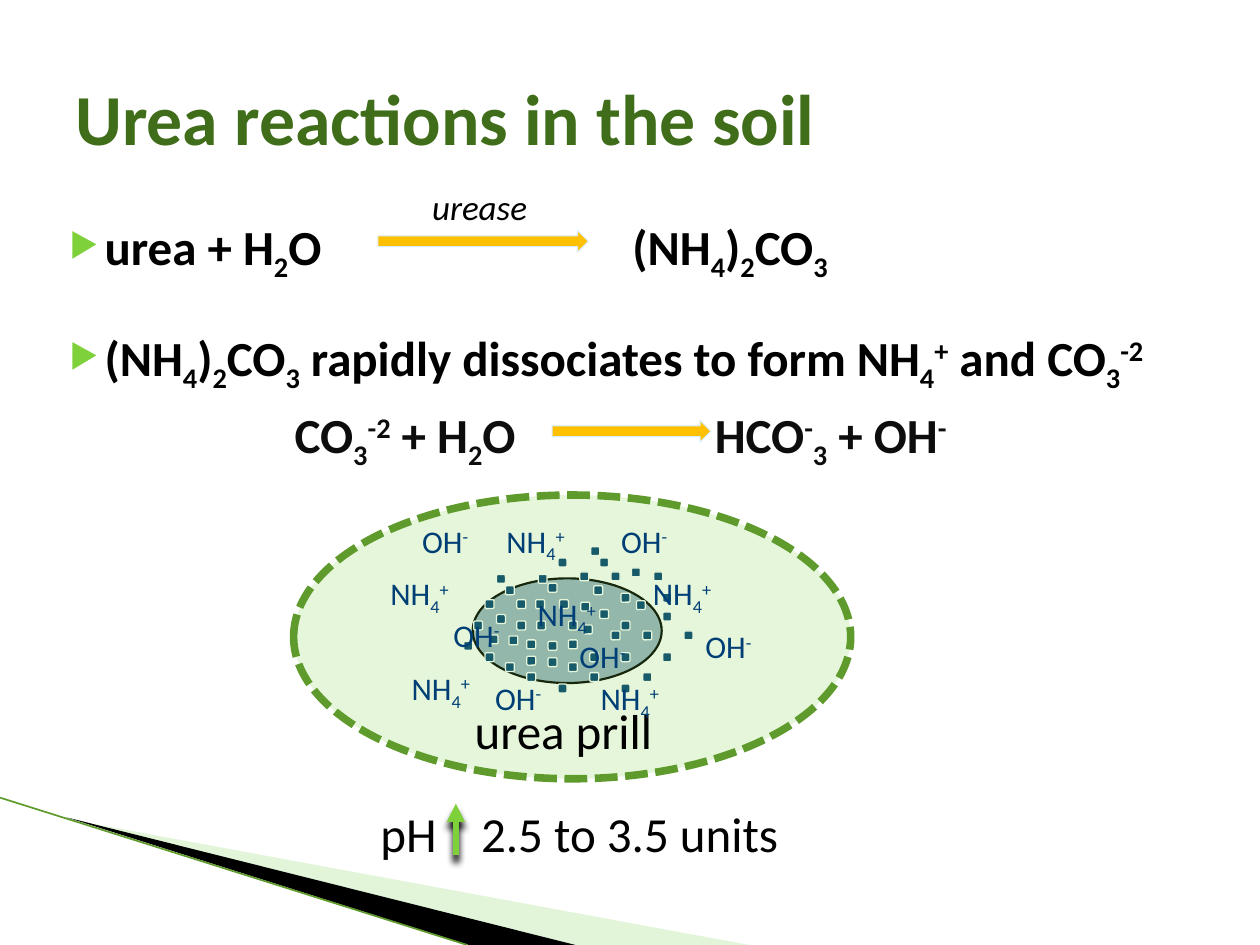
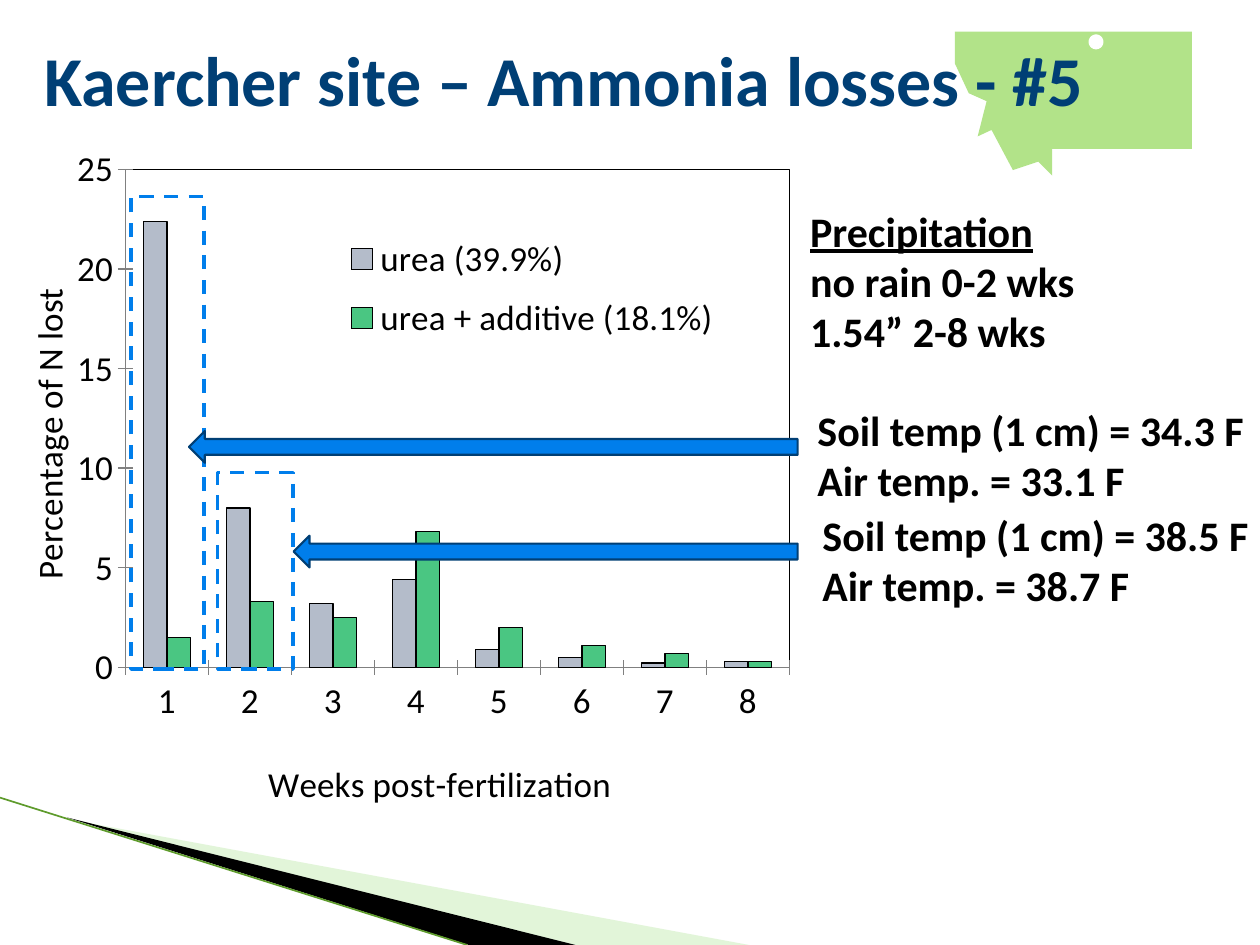
from lxml import etree
from pptx import Presentation
from pptx.chart.data import CategoryChartData
from pptx.dml.color import RGBColor
from pptx.enum.chart import XL_CHART_TYPE, XL_LEGEND_POSITION, XL_TICK_MARK
from pptx.enum.dml import MSO_LINE
from pptx.enum.shapes import MSO_CONNECTOR, MSO_SHAPE
from pptx.enum.text import MSO_ANCHOR
from pptx.oxml.ns import qn
from pptx.util import Cm, Pt

FONT = "Calibri"
BLACK, WHITE = "000000", "FFFFFF"
NAVY, BLUE, SKY = "003F75", "007EEB", "D6ECFF"
GREEN, LEAF, FOREST, PALE = "7FD13B", "5E9B2C", "3F6D19", "B8E7A1"
AMBER = "FFC000"

DOT_SIZE = 0.18
DOT_ROWS = {
    1.04: [5.99], 1.27: [5.33, 6.17], 1.47: [6.81], 1.55: [5.77, 6.4, 7.26],
    1.6: [4.09, 4.93], 1.78: [5.13], 1.83: [4.27, 6.05], 1.98: [6.6, 7.44],
    2.11: [3.86, 4.5, 4.88, 5.36], 2.13: [6.91], 2.16: [5.79], 2.31: [6.17],
    2.36: [7.44], 2.41: [4.09], 2.54: [3.63, 4.5, 4.9, 5.54, 6.6], 2.62: [5.84],
    2.74: [6.4, 7.04, 7.87], 2.82: [3.94], 2.84: [4.34], 2.92: [4.7, 5.54],
    2.95: [3.43, 5.13], 3.18: [3.86, 5.97, 6.6, 7.44], 3.25: [4.7], 3.28: [5.13],
    3.38: [4.27, 5.54], 3.58: [4.7, 5.97, 7.04], 3.81: [5.33, 6.6],
}
IONS = {
    "NH|_4|^+": [(2.13, 3.38), (1.7, 1.47), (5.94, 3.58),
                 (4.04, 0.41), (6.99, 1.47), (4.67, 1.9)],
    "OH|^-": [(5.51, 2.74), (3.81, 3.58), (2.34, 0.41),
              (8.05, 2.54), (2.97, 2.31), (6.35, 0.41)],
}
STATE_OUTLINE = [
    (0, 0), (0, 0.64), (0.28, 1.24), (0.64, 1.4), (0.46, 2.11), (0.74, 1.98),
    (1.17, 2.79), (1.68, 2.62), (1.96, 2.9), (1.96, 2.36), (4.78, 2.36), (4.78, 0),
]
LOSSES = [
    ("urea (39.9%)", [22.4, 8, 3.2, 4.4, 0.9, 0.5, 0.2, 0.3], "B4BCCA", 100),
    ("urea + additive (18.1%)", [1.5, 3.3, 2.5, 6.8, 2, 1.1, 0.7, 0.3], "00B050", 71),
]


def rgb(value):
    return RGBColor.from_string(value)


def add_element(parent, tag, **attributes):
    element = etree.SubElement(parent, qn(tag))
    for name, value in attributes.items():
        element.set(name, str(value))
    return element


def set_fill(fill, color, opacity=100):
    if color is None:
        fill.background()
        return
    fill.solid()
    fill.fore_color.rgb = rgb(color)
    if opacity < 100:
        add_element(fill._xPr.find(".//" + qn("a:srgbClr")), "a:alpha", val=opacity * 1000)


def set_line(line, color, width=0.75, dash=None):
    if color is None:
        line.fill.background()
        return
    line.color.rgb = rgb(color)
    line.width = Pt(width)
    if dash:
        line.dash_style = dash


def add_shape(slide, kind, left, top, width, height, fill=None, opacity=100,
              line=None, line_width=0.75, dash=None):
    shape = slide.shapes.add_shape(kind, Cm(left), Cm(top), Cm(width), Cm(height))
    shape.shadow.inherit = False
    set_fill(shape.fill, fill, opacity)
    set_line(shape.line, line, line_width, dash)
    return shape


def add_polygon(slide, points, fill, opacity=100, left=0, top=0):
    points = [(Cm(left + x), Cm(top + y)) for x, y in points]
    builder = slide.shapes.build_freeform(*points[0])
    builder.add_line_segments(points[1:], close=True)
    shape = builder.convert_to_shape()
    shape.shadow.inherit = False
    set_fill(shape.fill, fill, opacity)
    set_line(shape.line, None)


def add_line(slide, start, end, color, width):
    connector = slide.shapes.add_connector(
        MSO_CONNECTOR.STRAIGHT, *(Cm(value) for value in (*start, *end)))
    set_line(connector.line, color, width)
    effects = add_element(connector._element.spPr, "a:effectLst")
    return connector, effects


def add_bullet(paragraph):
    properties = paragraph._p.get_or_add_pPr()
    properties.set("marL", str(Cm(1.02)))
    properties.set("indent", str(-Cm(0.71)))
    add_element(add_element(properties, "a:buClr"), "a:srgbClr", val=GREEN)
    add_element(properties, "a:buSzPct", val=68000)
    add_element(properties, "a:buChar", char="▶")


def add_tab(paragraph, position):
    tabs = add_element(paragraph._p.get_or_add_pPr(), "a:tabLst")
    add_element(tabs, "a:tab", pos=Cm(position), algn="l")


def add_text(slide, text, left, top, width, height, size=28, color=BLACK, bold=False,
             italic=False, anchor=MSO_ANCHOR.TOP, bullet=False, tab=None, gap=0):
    """Lines become paragraphs; | parts runs, _ lowers a run and ^ raises it."""
    box = slide.shapes.add_textbox(Cm(left), Cm(top), Cm(width), Cm(height))
    frame = box.text_frame
    frame.word_wrap = True
    frame.vertical_anchor = anchor
    frame.margin_right = 0
    for index, line in enumerate(text.split("\n")):
        paragraph = frame.add_paragraph() if index else frame.paragraphs[0]
        if bullet:
            add_bullet(paragraph)
        if tab:
            add_tab(paragraph, tab)
        if index and gap:
            paragraph.space_before = Pt(gap)
        for part in line.split("|"):
            run = paragraph.add_run()
            run.text = part.lstrip("_^")
            font = run.font
            font.name, font.size, font.bold, font.italic = FONT, Pt(size), bold, italic
            font.color.rgb = rgb(color)
            baseline = {"_": -25000, "^": 30000}.get(part[0])
            if baseline:
                run._r.get_or_add_rPr().set("baseline", str(baseline))
    return box


def add_title(slide, text, left, top, size, color):
    add_text(slide, text, left, top, 22.86, 3.18, size=size, color=color,
             bold=True, anchor=MSO_ANCHOR.MIDDLE)


def new_slide(presentation):
    """Add a blank slide with the corner bands."""
    slide = presentation.slides.add_slide(presentation.slide_layouts[6])
    add_polygon(slide, [(1.4, 16.52), (15.1, 19.05), (11.58, 19.05)], PALE, 40)
    add_polygon(slide, [(1.35, 16.48), (11.6, 19.05), (9.45, 19.05)], BLACK)
    add_line(slide, (0, 16.08), (9.42, 19.05), LEAF, 0.95)
    return slide


def add_reaction_arrow(slide, left, top, width):
    add_shape(slide, MSO_SHAPE.RIGHT_ARROW, left, top, width, 0.43,
              fill=AMBER, line=SKY, line_width=0.5)


def add_equations(slide, left, top):
    carbonate = "(NH|_4|)|_2|CO|_3"
    add_text(slide, f"urea + H|_2|O\n{carbonate}| rapidly dissociates to form "
             "NH|_4|^+| and CO|_3|^-2",
             left, top, 23.7, 3.53, bold=True, bullet=True, gap=25)
    add_text(slide, carbonate, left + 11.66, top, 5.5, 1.45, bold=True)
    add_text(slide, "urease", left + 7.62, top - 0.63, 2.6, 1.12, size=20, italic=True)
    add_reaction_arrow(slide, left + 6.78, top + 0.41, 4.24)
    add_text(slide, "CO|_3|^-2| + H|_2|O\tHCO|^-|_3| + OH|^-",
             left + 4.85, top + 3.79, 15.27, 1.5, color="0D0D0D", bold=True, tab=8.47)
    add_reaction_arrow(slide, left + 10.29, top + 4.24, 3.2)


def add_rising_arrow(slide, x, bottom, top):
    connector, effects = add_line(slide, (x, bottom), (x, top), GREEN, 3.5)
    add_element(connector.line._get_or_add_ln(), "a:tailEnd", type="triangle")
    shadow = add_element(effects, "a:outerShdw", blurRad=Pt(4), dist=Pt(4), dir=5400000)
    add_element(shadow, "a:srgbClr", val=BLACK)


def add_prill_diagram(slide, left, top):
    add_shape(slide, MSO_SHAPE.OVAL, left + 3.61, top + 1.68, 3.81, 2.11,
              fill=NAVY, opacity=40, line=BLACK, line_width=1.25)
    for y, row in DOT_ROWS.items():
        for x in row:
            add_shape(slide, MSO_SHAPE.ROUNDED_RECTANGLE, left + x, top + y,
                      DOT_SIZE, DOT_SIZE, fill=NAVY, line=WHITE)
    add_shape(slide, MSO_SHAPE.OVAL, left, top, 11.23, 5.72, fill=GREEN, opacity=19,
              line=LEAF, line_width=4.33, dash=MSO_LINE.SQUARE_DOT)
    add_text(slide, "urea prill", left + 3.4, top + 4.01, 4.11, 1.45)
    for ion, places in IONS.items():
        for x, y in places:
            add_text(slide, ion, left + x, top + y, 1.75, 1.02, size=18, color=NAVY)
    add_text(slide, "pH\t2.5 to 3.5 units", left + 1.5, top + 6.1, 8.86, 1.45, tab=2.03)
    add_rising_arrow(slide, left + 3.27, top + 7.26, top + 6.22)


def set_layout(parent, index, **fractions):
    """Place a chart part by fractions of the chart's size."""
    old = parent.find(qn("c:layout"))
    if old is not None:
        parent.remove(old)
    layout = add_element(parent, "c:layout")
    manual = add_element(layout, "c:manualLayout")
    if parent.tag == qn("c:plotArea"):
        add_element(manual, "c:layoutTarget", val="inner")
    for name in "xy":
        add_element(manual, f"c:{name}Mode", val="edge")
    for name, value in fractions.items():
        add_element(manual, f"c:{name}", val=value)
    parent.insert(index, layout)


def style_axis(axis, title, x, y):
    axis.has_major_gridlines = False
    axis.major_tick_mark = XL_TICK_MARK.CROSS
    axis.tick_labels.font.size = Pt(20)
    set_line(axis.format.line, "808080")
    frame = axis.axis_title.text_frame
    frame.text = title
    font = frame.paragraphs[0].runs[0].font
    font.name, font.size, font.bold = FONT, Pt(20), False
    font.color.rgb = rgb(BLACK)
    set_layout(axis.axis_title._element, 1, x=x, y=y)


def add_loss_chart(slide, left, top, width, height):
    data = CategoryChartData()
    data.categories = [str(week) for week in range(1, 9)]
    for name, values, _, _ in LOSSES:
        data.add_series(name, values)
    chart = slide.shapes.add_chart(XL_CHART_TYPE.COLUMN_CLUSTERED, Cm(left), Cm(top),
                                   Cm(width), Cm(height), data).chart
    chart.has_title = False
    chart.font.name, chart.font.size = FONT, Pt(20)
    chart.font.color.rgb = rgb(BLACK)

    plot = chart.plots[0]
    plot.vary_by_categories = False
    plot.gap_width, plot.overlap = 150, 0
    for series, (_, _, color, opacity) in zip(plot.series, LOSSES):
        set_fill(series.format.fill, color, opacity)
        set_line(series.format.line, BLACK)

    style_axis(chart.category_axis, "Weeks post-fertilization", 0.29, 0.9)
    style_axis(chart.value_axis, "Percentage of N lost", 0.02, 0.2)
    axis = chart.value_axis
    axis.minimum_scale, axis.maximum_scale, axis.major_unit = 0, 25, 5
    axis.tick_labels.number_format = "0"
    axis.tick_labels.number_format_is_linked = False

    chart.has_legend = True
    chart.legend.position = XL_LEGEND_POSITION.RIGHT
    chart.legend.include_in_layout = False
    chart.legend.font.name, chart.legend.font.size = FONT, Pt(20)
    set_layout(chart.legend._element, 1, x=0.36, y=0.11, w=0.46, h=0.2)

    area = chart._chartSpace.chart.plotArea
    set_layout(area, 0, x=0.139, y=0.033, w=0.736, h=0.74)
    frame = add_element(area, "c:spPr")
    add_element(frame, "a:noFill")
    border = add_element(add_element(frame, "a:ln", w=Pt(0.75)), "a:solidFill")
    add_element(border, "a:srgbClr", val=BLACK)


def add_state_map(slide, left, top):
    add_polygon(slide, STATE_OUTLINE, "B2E389", left=left, top=top)
    add_shape(slide, MSO_SHAPE.OVAL, left + 2.77, top + 0.13, 0.15, 0.15,
              fill="FF0000", line=WHITE, line_width=4.33)


def add_week_callout(slide, left, top, width, arrow_left, arrow_top, text_left, text):
    """Frame one week's columns and point to them from its temperatures."""
    base, arrow_end = 13.49, 16.08
    add_shape(slide, MSO_SHAPE.RECTANGLE, left, top, width, base - top,
              line=BLUE, line_width=2, dash=MSO_LINE.DASH)
    add_shape(slide, MSO_SHAPE.LEFT_ARROW, arrow_left, arrow_top, arrow_end - arrow_left,
              0.64, fill=BLUE, line=NAVY, line_width=1.25)
    add_text(slide, text, text_left, arrow_top - 0.66, 25.4 - text_left, 2.31,
             size=24, bold=True)


def build_reactions_slide(presentation):
    slide = new_slide(presentation)
    add_title(slide, "Urea reactions in the soil", 1.27, 0.76, 41, FOREST)
    add_equations(slide, 0.84, 4.24)
    add_prill_diagram(slide, 5.92, 9.98)


def build_losses_slide(presentation):
    slide = new_slide(presentation)
    add_state_map(slide, 19.25, 0.64)
    add_loss_chart(slide, 0, 2.97, 18.19, 13.56)
    add_title(slide, "Kaercher site – Ammonia losses - #5", 0.64, 0, 40, NAVY)
    rain = add_text(slide, "Precipitation\nno rain 0-2 wks\n1.54” 2-8 wks",
                    16.08, 4.01, 7.42, 3.3, size=24, bold=True)
    rain.text_frame.paragraphs[0].runs[0].font.underline = True
    add_week_callout(slide, 2.64, 3.96, 1.47, 3.81, 8.69, 16.23,
                     "Soil temp (1 cm) = 34.3 F\nAir temp. = 33.1 F")
    add_week_callout(slide, 4.39, 9.53, 1.52, 5.92, 10.8, 16.33,
                     "Soil temp (1 cm) = 38.5 F\nAir temp. = 38.7 F")


def main():
    presentation = Presentation()
    presentation.slide_width, presentation.slide_height = Cm(25.4), Cm(19.05)
    build_reactions_slide(presentation)
    build_losses_slide(presentation)
    presentation.save("out.pptx")


if __name__ == "__main__":
    main()
